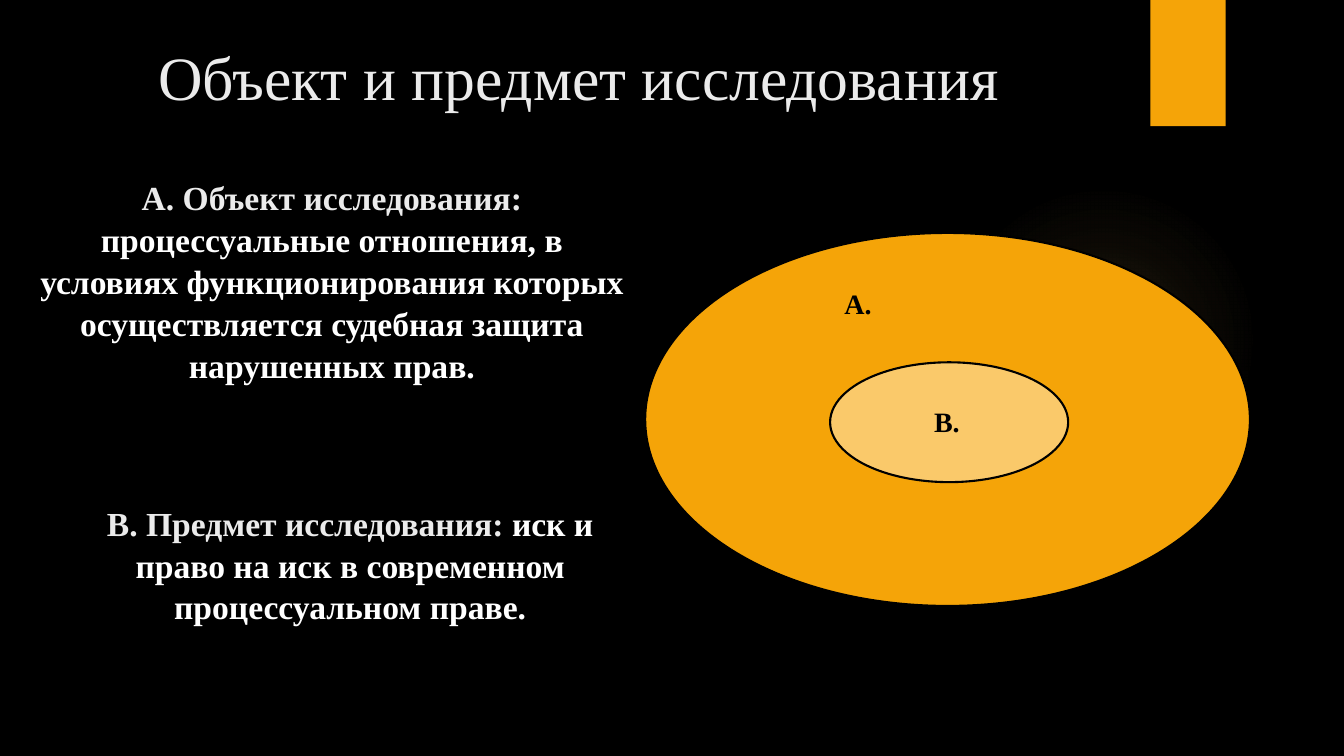
"""Build a slide on the object and the subject of a legal study, shown as nested ellipses."""
import pptx
import pptx.util
import pptx.dml.color
import pptx.enum.shapes
import pptx.enum.text
import pptx.oxml
import pptx.oxml.ns

Cm = pptx.util.Cm
Pt = pptx.util.Pt
RGBColor = pptx.dml.color.RGBColor
Shape = pptx.enum.shapes.MSO_SHAPE
Align = pptx.enum.text.PP_ALIGN
Anchor = pptx.enum.text.MSO_ANCHOR

BLACK = RGBColor(0x00, 0x00, 0x00)
WHITE = RGBColor(0xFF, 0xFF, 0xFF)
PALE = RGBColor(0xEB, 0xEB, 0xEB)
AMBER = RGBColor(0xF5, 0xA4, 0x08)
SAND = RGBColor(0xFA, 0xC9, 0x6A)


def add_run(paragraph, text, *, size, color, bold=True, font="Times New Roman"):
    """Append a formatted run to a paragraph."""
    run = paragraph.add_run()
    run.text = text
    run.font.name = font
    run.font.size = Pt(size)
    run.font.bold = bold
    run.font.color.rgb = color


class StudySlide:
    """Draw the elements of one slide in a shared style."""

    def __init__(self, slide):
        self.slide = slide
        slide.background.fill.solid()
        slide.background.fill.fore_color.rgb = BLACK

    def figure(self, preset, box, fill, outline=None):
        """Add a filled preset shape."""
        figure = self.slide.shapes.add_shape(preset, *map(Cm, box))
        figure.shadow.inherit = False
        figure.fill.solid()
        figure.fill.fore_color.rgb = fill
        if outline is None:
            figure.line.fill.background()
        else:
            figure.line.color.rgb = outline
            figure.line.width = Pt(1.5)
        return figure

    def glow(self, box, color, stops):
        """Add a circle whose opacity fades outwards; stops hold position and opacity in percent."""
        halo = self.figure(Shape.OVAL, box, color)
        stop_list = "".join(
            f'<a:gs pos="{position * 1000}"><a:srgbClr val="{color}">'
            f'<a:alpha val="{opacity * 1000}"/></a:srgbClr></a:gs>'
            for position, opacity in stops
        )
        gradient = pptx.oxml.parse_xml(
            f'<a:gradFill {pptx.oxml.ns.nsdecls("a")} rotWithShape="1">'
            f'<a:gsLst>{stop_list}</a:gsLst><a:path path="circle">'
            '<a:fillToRect l="50000" t="50000" r="50000" b="50000"/></a:path></a:gradFill>'
        )
        properties = halo.fill._xPr
        properties.replace(properties.find(pptx.oxml.ns.qn("a:solidFill")), gradient)

    def text(self, box, runs, *, size, bold=True, align=Align.CENTER, anchor=Anchor.TOP, spacing=1.0):
        """Add a one-paragraph text box from pairs of text and colour."""
        frame = self.slide.shapes.add_textbox(*map(Cm, box)).text_frame
        frame.word_wrap = True
        frame.vertical_anchor = anchor
        paragraph = frame.paragraphs[0]
        paragraph.alignment = align
        paragraph.line_spacing = spacing
        for text, color in runs:
            add_run(paragraph, text, size=size, color=color, bold=bold)

    def definition(self, box, term, meaning):
        """Add a pale term followed by its white explanation."""
        self.text(box, [(term, PALE), (meaning, WHITE)], size=24, spacing=1.04)

    def label(self, left, top, letter):
        """Add a black letter inside an ellipse."""
        self.text((left, top, 8.74, 1.12), [(letter, BLACK)], size=20, align=Align.LEFT)


def main():
    """Compose and save the slide."""
    presentation = pptx.Presentation()
    presentation.slide_width = Cm(33.87)
    presentation.slide_height = Cm(19.05)
    study = StudySlide(presentation.slides.add_slide(presentation.slide_layouts[6]))

    study.glow((23.9, 4.65, 7.82, 7.82), SAND, [(0, 7), (36, 6), (69, 0)])
    study.figure(Shape.RECTANGLE, (28.99, 0, 1.9, 3.18), AMBER)
    study.text((1.52, 0.69, 26.14, 2.69), [("Объект и предмет исследования", PALE)],
               size=44, bold=False, anchor=Anchor.MIDDLE, spacing=0.9)

    study.definition((1.52, 12.5, 14.61, 3.33), "B. Предмет исследования: ",
                     "иск и право на иск в современном процессуальном праве.")
    study.definition((0.48, 4.29, 15.77, 7.26), "A. Объект исследования: ",
                     "процессуальные отношения, в условиях функционирования которых "
                     "осуществляется судебная защита нарушенных прав.")

    study.figure(Shape.OVAL, (16.26, 5.87, 15.24, 9.4), AMBER, BLACK)
    study.label(21.03, 7.09, "A.")
    study.figure(Shape.OVAL, (20.92, 9.13, 6, 3.02), SAND, BLACK)
    study.label(23.29, 10.08, "B.")

    presentation.save("out.pptx")


if __name__ == "__main__":
    main()
